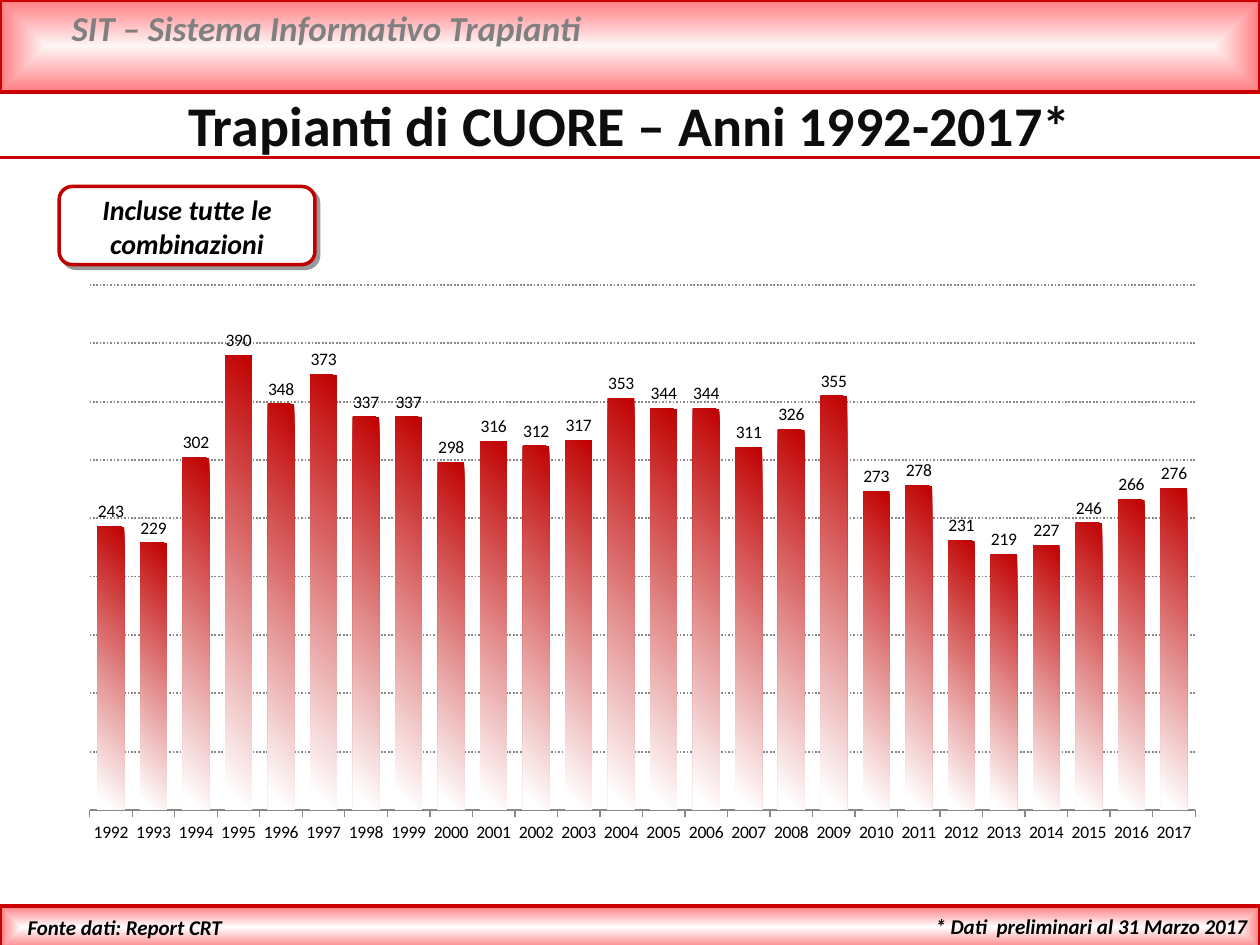
from pptx import Presentation
from pptx.chart.data import CategoryChartData
from pptx.dml.color import RGBColor
from pptx.enum.chart import XL_CHART_TYPE as Kind, XL_LABEL_POSITION as Spot, XL_TICK_MARK as Tick
from pptx.enum.dml import MSO_LINE as Dash
from pptx.enum.shapes import MSO_CONNECTOR as Link, MSO_SHAPE as Form
from pptx.enum.text import MSO_AUTO_SIZE as Fit, PP_ALIGN as Align
from pptx.oxml import parse_xml
from pptx.oxml.ns import nsdecls
from pptx.util import Inches, Pt

FONT = "Calibri"
RED, DARK, PINK, GREY = "CC0000", "C00000", "FF7C80", "888888"

# Content: wording, box, size, colour, italic, alignment
TEXTS = [
    ("SIT – Sistema Informativo Trapianti", (0.47, 0, 8.98, 0.44), 20, "808080", True, Align.LEFT),
    ("* Dati  preliminari al 31 Marzo 2017", (5.87, 7.2, 4.13, 0.3), 12, "000000", True, Align.RIGHT),
    ("Fonte dati: Report CRT", (0.12, 7.21, 3.21, 0.3), 12, "000000", True, Align.LEFT),
    ("Trapianti di CUORE – Anni 1992-2017*", (0, 0.67, 10, 0.64), 32, "0D0D0D", False, Align.CENTER),
    ("Incluse tutte le combinazioni", (0.47, 1.48, 2.03, 0.64), 16, "000000", True, Align.CENTER),
]
BANDS = [((0, 0, 10, 0.73), "FFF6F6"), ((0, 7.19, 10, 0.34), "FFFFFF")]
FIRST = 1992
HEARTS = [243, 229, 302, 390, 348, 373, 337, 337, 298, 316, 312, 317, 353,
          344, 344, 311, 326, 355, 273, 278, 231, 219, 227, 246, 266, 276]


def rgb(code):
    return RGBColor.from_string(code)


def place(box):
    return [Inches(n) for n in box]


def grad(stops, way):
    marks = "".join(f'<a:gs pos="{pos * 1000}"><a:srgbClr val="{code}"/></a:gs>'
                    for pos, code in stops)
    return parse_xml(f'<a:gradFill {nsdecls("a")} rotWithShape="1">'
                     f'<a:gsLst>{marks}</a:gsLst>{way}</a:gradFill>')


def swap_fill(props, fill):
    old = props.find("{*}solidFill")
    props.replace(old, fill)


def draw(form, box, fill, edge):
    shape = slide.shapes.add_shape(form, *place(box))
    shape.shadow.inherit = False
    shape.fill.solid()
    shape.fill.fore_color.rgb = rgb(fill)
    shape.line.color.rgb = rgb(edge)
    shape.line.width = Pt(2)
    return shape


def write(text, box, size, code, slant, align):
    frame = slide.shapes.add_textbox(*place(box)).text_frame
    frame.word_wrap = True
    frame.auto_size = Fit.SHAPE_TO_FIT_TEXT
    frame.text = text
    para = frame.paragraphs[0]
    para.alignment = align
    font = para.runs[0].font
    font.name, font.size = FONT, Pt(size)
    font.bold, font.italic = True, slant
    font.color.rgb = rgb(code)


deck = Presentation()
deck.slide_width, deck.slide_height = Inches(10), Inches(7.5)
slide = deck.slides.add_slide(deck.slide_layouts[6])

# Header and footer bands, lightest in the middle
CENTRE = '<a:path path="rect"><a:fillToRect l="50000" t="50000" r="50000" b="50000"/></a:path>'
for box, light in BANDS:
    band = draw(Form.RECTANGLE, box, light, RED)
    swap_fill(band.element.spPr, grad([(0, light), (100, PINK)], CENTRE))

# Rule below the title
rule = slide.shapes.add_connector(Link.STRAIGHT, *place((0, 1.25, 10, 1.25)))
rule.line.color.rgb = rgb(RED)
rule.line.width = Pt(2)
rule.element.spPr.append(parse_xml(f'<a:effectLst {nsdecls("a")}/>'))

# Frame of the note, with its shadow
note = draw(Form.ROUNDED_RECTANGLE, (0.47, 1.48, 2.03, 0.62), "FFFFFF", DARK)
note.element.spPr.find("{*}effectLst").append(parse_xml(
    f'<a:outerShdw {nsdecls("a")} blurRad="0" dist="{Pt(3)}" dir="{45 * 60000}" algn="tl" rotWithShape="0">'
    '<a:srgbClr val="000000"><a:alpha val="40000"/></a:srgbClr></a:outerShdw>'))

for item in TEXTS:
    write(*item)

# Chart of transplants per year
data = CategoryChartData()
data.categories = [str(FIRST + n) for n in range(len(HEARTS))]
data.add_series("Series 1", HEARTS)
chart = slide.shapes.add_chart(Kind.COLUMN_CLUSTERED, *place((0.53, 2.17, 9.14, 4.63)), data).chart
chart.has_legend = chart.has_title = False
chart.font.name, chart.font.size = FONT, Pt(10)
chart.font.color.rgb = rgb("000000")

years, count = chart.category_axis, chart.value_axis
years.major_tick_mark = Tick.OUTSIDE
years.format.line.color.rgb = rgb(GREY)
count.minimum_scale, count.maximum_scale, count.major_unit = 0, 450, 50
count.visible = False
grid = count.major_gridlines.format.line
grid.color.rgb = rgb(GREY)
grid.width = Pt(1)
grid.dash_style = Dash.ROUND_DOT

plot = chart.plots[0]
plot.vary_by_categories = False
plot.gap_width, plot.overlap = 60, -20
plot.has_data_labels = True
plot.data_labels.show_value = True
plot.data_labels.position = Spot.OUTSIDE_END

bars = plot.series[0]
bars.invert_if_negative = False
bars.format.fill.solid()
bars.format.fill.fore_color.rgb = rgb(DARK)
swap_fill(bars.format.fill._xPr, grad([(0, DARK), (96, "FFFFFF")], f'<a:lin ang="{135 * 60000}" scaled="0"/>'))

# Plot area as shares of the chart
area = chart.element.chart.plotArea
for old in area.findall("{*}layout"):
    area.remove(old)
shares = "".join(f'<c:{key} val="{val}"/>' for key, val in
                 [("x", 0.02), ("y", 0.02), ("w", 0.96), ("h", 0.9)])
area.insert(0, parse_xml(
    f'<c:layout {nsdecls("c")}><c:manualLayout><c:layoutTarget val="inner"/>'
    f'<c:xMode val="edge"/><c:yMode val="edge"/>{shares}</c:manualLayout></c:layout>'))

deck.save("out.pptx")
